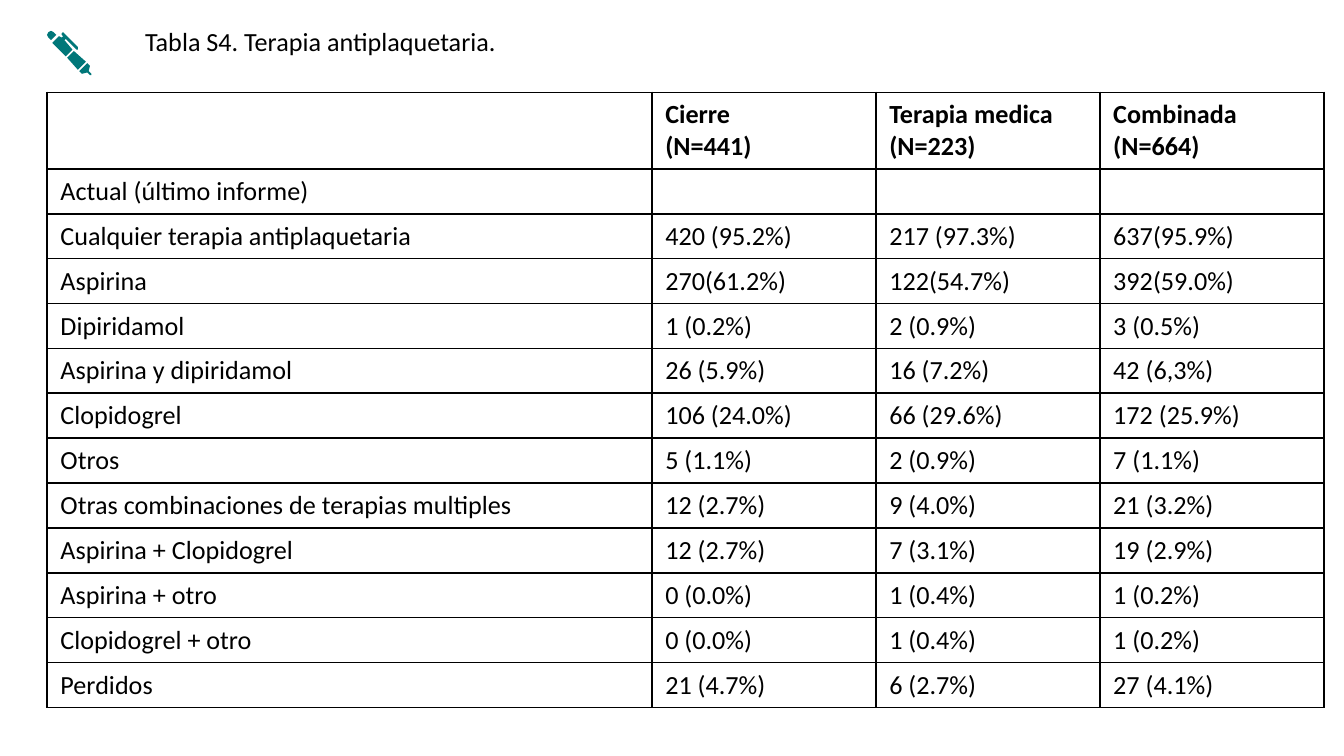
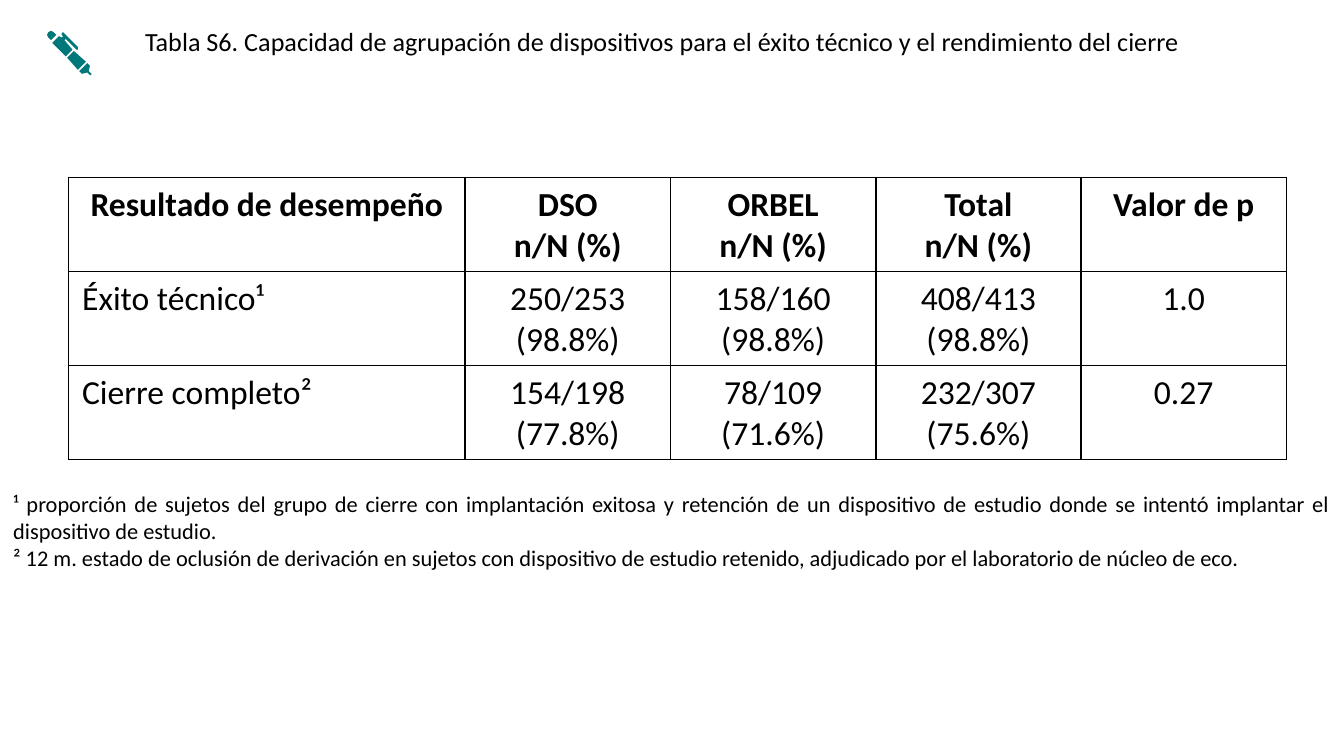
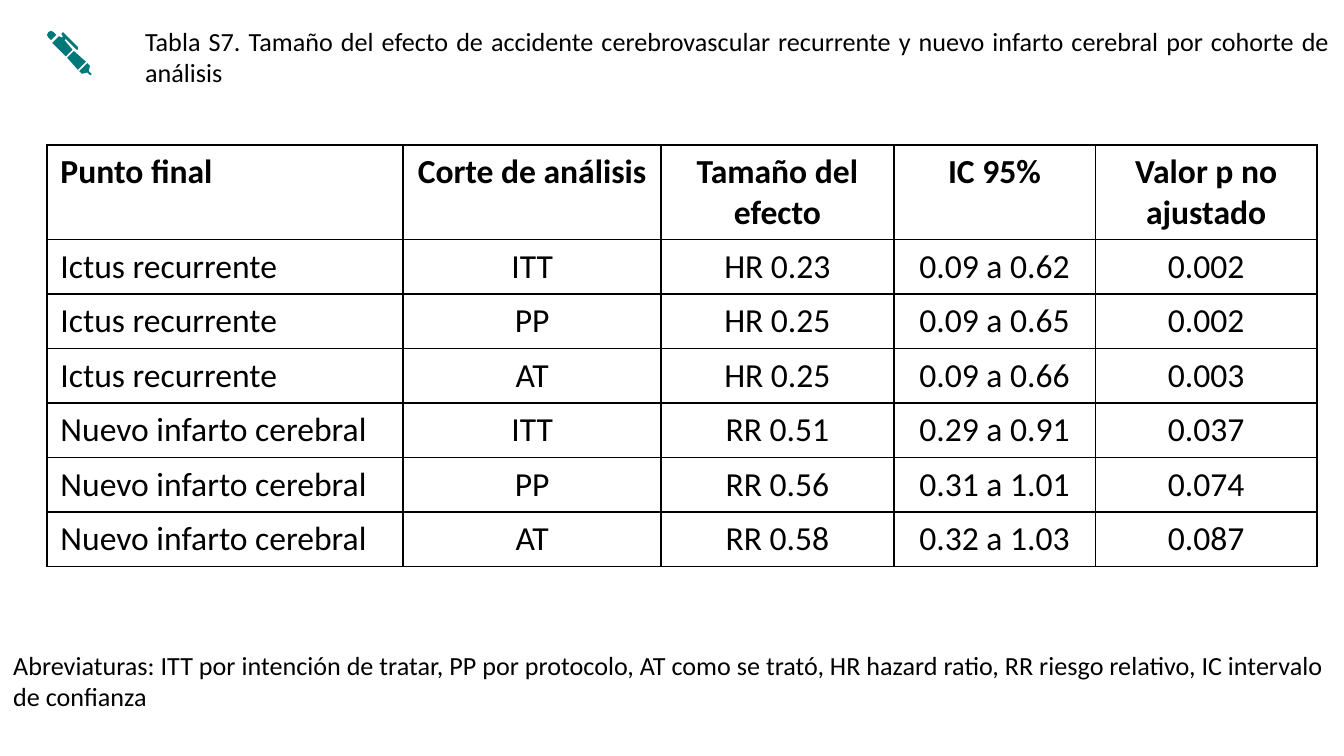
import pptx
import pptx.dml.color
import pptx.enum.text
import pptx.oxml
import pptx.oxml.ns
import pptx.util

Pt = pptx.util.Pt
ALIGNMENTS = {
    "l": pptx.enum.text.PP_ALIGN.LEFT,
    "c": pptx.enum.text.PP_ALIGN.CENTER,
    "j": pptx.enum.text.PP_ALIGN.JUSTIFY,
}
PEN_UNIT = 0.72
PEN_OUTLINES = [
    [(65, 47), (59, 53), (61, 55), (65, 54), (67, 56), (68, 56), (68, 55), (66, 53), (67, 49)],
    [(55, 38), (50, 43), (58, 52), (64, 46)],
    [(48, 25), (47, 24), (46, 25), (46, 26), (47, 27), (46, 28), (44, 27), (39, 32), (49, 42),
     (54, 37), (48, 30), (49, 29), (57, 37), (58, 37), (58.5, 36), (58, 35)],
    [(38, 23), (36, 24), (35.3, 26), (36, 28), (38, 30), (42, 26), (40, 24)],
]

ANTIPLATELET_ROWS = [
    ["", "Cierre\n(N=441)", "Terapia medica\n(N=223)", "Combinada\n(N=664)"],
    ["Actual (último informe)", "", "", ""],
    ["Cualquier terapia antiplaquetaria", "420 (95.2%)", "217 (97.3%)", "637(95.9%)"],
    ["Aspirina", "270(61.2%)", "122(54.7%)", "392(59.0%)"],
    ["Dipiridamol", "1 (0.2%)", "2 (0.9%)", "3 (0.5%)"],
    ["Aspirina y dipiridamol", "26 (5.9%)", "16 (7.2%)", "42 (6,3%)"],
    ["Clopidogrel", "106 (24.0%)", "66 (29.6%)", "172 (25.9%)"],
    ["Otros", "5 (1.1%)", "2 (0.9%)", "7 (1.1%)"],
    ["Otras combinaciones de terapias multiples", "12 (2.7%)", "9 (4.0%)", "21 (3.2%)"],
    ["Aspirina + Clopidogrel", "12 (2.7%)", "7 (3.1%)", "19 (2.9%)"],
    ["Aspirina + otro", "0 (0.0%)", "1 (0.4%)", "1 (0.2%)"],
    ["Clopidogrel + otro", "0 (0.0%)", "1 (0.4%)", "1 (0.2%)"],
    ["Perdidos", "21 (4.7%)", "6 (2.7%)", "27 (4.1%)"],
]
DEVICE_ROWS = [
    ["Resultado de desempeño", "DSO\nn/N (%)", "ORBEL\nn/N (%)", "Total\nn/N (%)", "Valor de p"],
    ["Éxito técnico¹", "250/253\n(98.8%)", "158/160\n(98.8%)", "408/413\n(98.8%)", "1.0"],
    ["Cierre completo²", "154/198\n(77.8%)", "78/109\n(71.6%)", "232/307\n(75.6%)", "0.27"],
]
EFFECT_ROWS = [
    ["Punto final", "Corte de análisis", "Tamaño del efecto", "IC 95%", "Valor p no ajustado"],
    ["Ictus recurrente", "ITT", "HR 0.23", "0.09 a 0.62", "0.002"],
    ["Ictus recurrente", "PP", "HR 0.25", "0.09 a 0.65", "0.002"],
    ["Ictus recurrente", "AT", "HR 0.25", "0.09 a 0.66", "0.003"],
    ["Nuevo infarto cerebral", "ITT", "RR 0.51", "0.29 a 0.91", "0.037"],
    ["Nuevo infarto cerebral", "PP", "RR 0.56", "0.31 a 1.01", "0.074"],
    ["Nuevo infarto cerebral", "AT", "RR 0.58", "0.32 a 1.03", "0.087"],
]


def color(hex_code):
    return pptx.dml.color.RGBColor.from_string(hex_code)


class Deck:
    FONT = "Calibri"
    INK, PAPER, ACCENT = "000000", "FFFFFF", "007779"

    def __init__(self):
        self.presentation = pptx.Presentation()
        self.presentation.slide_width = Pt(720)
        self.presentation.slide_height = Pt(405)
        self.paint(self.presentation.slide_master.background.fill, self.PAPER)
        self.slide = None

    def paint(self, fill, hex_code):
        fill.solid()
        fill.fore_color.rgb = color(hex_code)

    def format_text(self, frame, size, align, bold=False):
        for paragraph in frame.paragraphs:
            paragraph.alignment = ALIGNMENTS[align]
            for run in paragraph.runs:
                run.font.name = self.FONT
                run.font.size = Pt(size)
                run.font.bold = bold
                run.font.color.rgb = color(self.INK)
            if not paragraph.runs:
                paragraph._p.get_or_add_endParaRPr().set("sz", str(size * 100))

    def add_slide(self, title, title_height=24.5):
        self.slide = self.presentation.slides.add_slide(self.presentation.slide_layouts[5])
        self.add_pen()
        heading = self.slide.shapes.title
        heading.left, heading.top = Pt(70.5), Pt(10)
        heading.width, heading.height = Pt(649.5), Pt(title_height)
        self.fill_frame(heading.text_frame, title, 14, "j")

    def fill_frame(self, frame, text, size, align):
        frame.text = text
        frame.word_wrap = True
        frame.auto_size = pptx.enum.text.MSO_AUTO_SIZE.SHAPE_TO_FIT_TEXT
        frame.vertical_anchor = pptx.enum.text.MSO_ANCHOR.TOP
        self.format_text(frame, size, align)

    def add_pen(self):
        first, *others = PEN_OUTLINES
        builder = self.slide.shapes.build_freeform(*first[0], scale=Pt(PEN_UNIT))
        builder.add_line_segments(first[1:], close=True)
        for outline in others:
            builder.move_to(*outline[0])
            builder.add_line_segments(outline[1:], close=True)
        pen = builder.convert_to_shape()
        pen.shadow.inherit = False
        self.paint(pen.fill, self.ACCENT)
        pen.line.fill.background()

    def add_note(self, text, top, height, size, align):
        note = self.slide.shapes.add_textbox(0, Pt(top), Pt(720), Pt(height))
        self.fill_frame(note.text_frame, text, size, align)

    def add_borders(self, cell):
        properties = cell._tc.get_or_add_tcPr()
        for side in "LRTB":
            properties.append(pptx.oxml.parse_xml(
                f'<a:ln{side} {pptx.oxml.ns.nsdecls("a")} w="{Pt(1)}"><a:solidFill>'
                f'<a:srgbClr val="{self.INK}"/></a:solidFill></a:ln{side}>'))

    def add_table(self, rows, left, top, widths, header_height, row_height, size,
                  header_align, body_align):
        heights = [header_height] + [row_height] * (len(rows) - 1)
        table = self.slide.shapes.add_table(
            len(rows), len(widths), Pt(left), Pt(top), Pt(sum(widths)), Pt(sum(heights))).table
        table.first_row = table.horz_banding = False
        for column, width in zip(table.columns, widths):
            column.width = Pt(width)
        for r, (values, height) in enumerate(zip(rows, heights)):
            table.rows[r].height = Pt(height)
            aligns = body_align if r else header_align
            for c, (value, align) in enumerate(zip(values, aligns)):
                cell = table.cell(r, c)
                cell.text_frame.text = value
                self.format_text(cell.text_frame, size, align, bold=r == 0)
                self.add_borders(cell)
                self.paint(cell.fill, self.PAPER)


def main():
    deck = Deck()

    deck.add_slide("Tabla S4. Terapia antiplaquetaria.")
    deck.add_table(ANTIPLATELET_ROWS, 25.2, 49.5, [324] + [120] * 3, 41, 24, 14, "llll", "llll")

    deck.add_slide("Tabla S6. Capacidad de agrupación de dispositivos para el éxito técnico "
                   "y el rendimiento del cierre")
    deck.add_note("¹ proporción de sujetos del grupo de cierre con implantación exitosa y retención "
                  "de un dispositivo de estudio donde se intentó implantar el dispositivo de "
                  "estudio.\n² 12 m. estado de oclusión de derivación en sujetos con dispositivo "
                  "de estudio retenido, adjudicado por el laboratorio de núcleo de eco.",
                  259.2, 51, 12, "j")
    deck.add_table(DEVICE_ROWS, 36.8, 95, [212.4] + [110] * 4, 50.4, 50.4, 18, "ccccc", "lcccc")

    deck.add_slide("Tabla S7. Tamaño del efecto de accidente cerebrovascular recurrente y nuevo "
                   "infarto cerebral por cohorte de análisis", 41)
    deck.add_note("Abreviaturas: ITT por intención de tratar, PP por protocolo, AT como se trató, "
                  "HR hazard ratio, RR riesgo relativo, IC intervalo de confianza",
                  344.2, 41, 14, "l")
    deck.add_table(EFFECT_ROWS, 25.2, 77.8, [190.8, 138.2, 124.6, 108, 118.8], 50.4, 29.2, 18,
                   "lcccc", "lcccc")

    deck.presentation.save("out.pptx")


if __name__ == "__main__":
    main()
